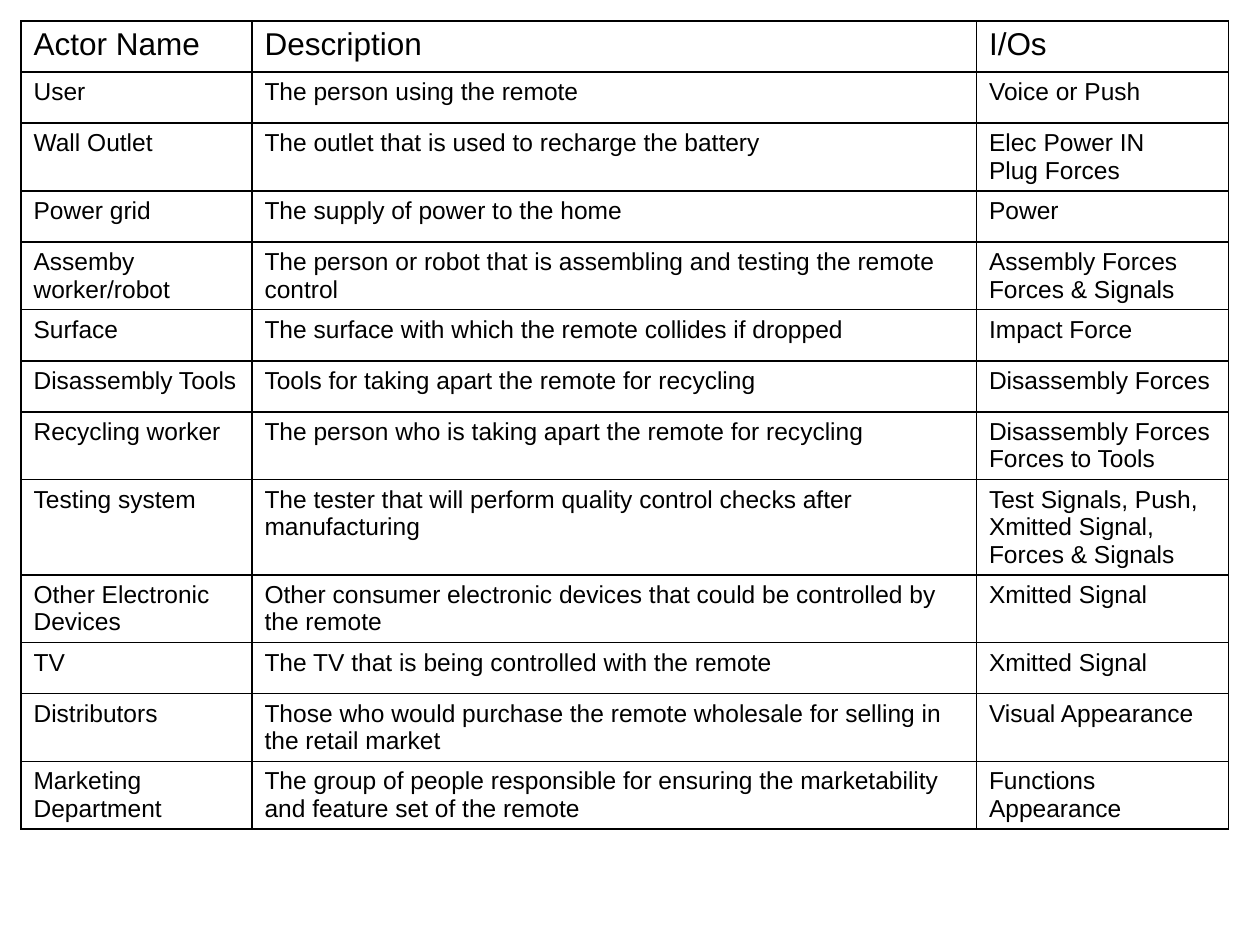
from lxml.etree import SubElement
from pptx import Presentation
from pptx.dml.color import RGBColor as RGB
from pptx.oxml.ns import qn
from pptx.util import Pt

COLORS = {"text": "000000", "border": "000000"}
COL_WIDTHS = [132, 414, 144]
ROW_HEIGHT = 29.2
ROWS = [
    ("Actor Name", "Description", "I/Os"),
    ("User", "The person using the remote", "Voice or Push"),
    ("Wall Outlet", "The outlet that is used to recharge the battery", "Elec Power IN\nPlug Forces"),
    ("Power grid", "The supply of power to the home", "Power"),
    ("Assemby worker/robot", "The person or robot that is assembling and testing the remote control",
     "Assembly Forces\nForces & Signals"),
    ("Surface", "The surface with which the remote collides if dropped", "Impact Force"),
    ("Disassembly Tools", "Tools for taking apart the remote for recycling", "Disassembly Forces"),
    ("Recycling worker", "The person who is taking apart the remote for recycling",
     "Disassembly Forces\nForces to Tools"),
    ("Testing system", "The tester that will perform quality control checks after manufacturing",
     "Test Signals, Push, Xmitted Signal, Forces & Signals"),
    ("Other Electronic Devices", "Other consumer electronic devices that could be controlled by the remote",
     "Xmitted Signal"),
    ("TV", "The TV that is being controlled with the remote", "Xmitted Signal"),
    ("Distributors", "Those who would purchase the remote wholesale for selling in the retail market",
     "Visual Appearance"),
    ("Marketing Department",
     "The group of people responsible for ensuring the marketability and feature set of the remote",
     "Functions\nAppearance"),
]


def write(tf, text, size=14, font="Arial", color="text"):
    tf.text = text
    for p in tf.paragraphs:
        for r in p.runs:
            r.font.size = Pt(size)
            r.font.name = font
            r.font.bold = False
            r.font.color.rgb = RGB.from_string(COLORS[color])


def add_borders(cell, width=1):
    tc_pr = cell._tc.get_or_add_tcPr()
    for i, side in enumerate(("a:lnL", "a:lnR", "a:lnT", "a:lnB")):
        ln = SubElement(tc_pr, qn(side), w=str(Pt(width)))
        fill = SubElement(ln, qn("a:solidFill"))
        SubElement(fill, qn("a:srgbClr"), val=COLORS["border"])
        tc_pr.insert(i, ln)


prs = Presentation()
prs.slide_width, prs.slide_height = Pt(720), Pt(540)
s = prs.slides.add_slide(prs.slide_layouts[6])

frame = s.shapes.add_table(len(ROWS), len(COL_WIDTHS), Pt(12), Pt(12),
                           Pt(sum(COL_WIDTHS)), Pt(ROW_HEIGHT * len(ROWS)))
table = frame.table
table.first_row = table.horz_banding = False
for column, width in zip(table.columns, COL_WIDTHS):
    column.width = Pt(width)

for i, row in enumerate(ROWS):
    table.rows[i].height = Pt(ROW_HEIGHT)
    for j, text in enumerate(row):
        cell = table.cell(i, j)
        cell.fill.background()
        add_borders(cell)
        write(cell.text_frame, text, size=18 if i == 0 else 14)
frame.height = Pt(477.4)

prs.save("out.pptx")
